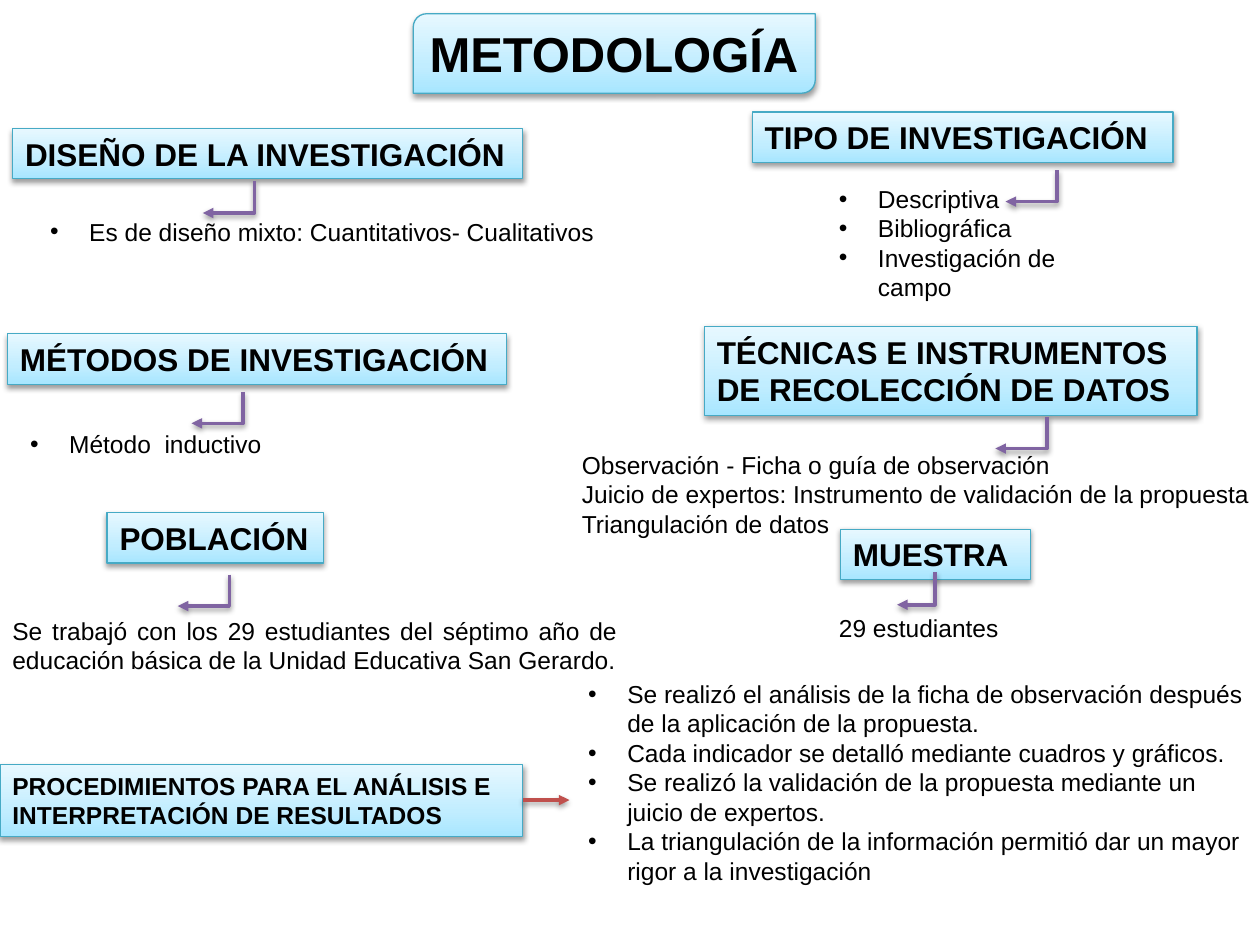
from copy import deepcopy

from lxml import etree
from pptx import Presentation
from pptx import util as u
from pptx.dml.color import RGBColor
from pptx.enum import shapes, text
from pptx.oxml.ns import qn

COLORS = {
    "text": "000000",
    "border": "46AAC5",
    "elbow": "8064A2",
    "straight": "C0504D",
    "shadow": "000000",
}
GRADIENT = [(0, "A7E6FF"), (0.35, "C1EDFF"), (1, "E7F8FF")]


def write_text(shape, lines, size=14, bold=False, bullet=False,
               align=text.PP_ALIGN.LEFT, space_after=0):
    frame = shape.text_frame
    frame.word_wrap = True
    frame.vertical_anchor = text.MSO_ANCHOR.TOP
    frame.text = "\n".join(lines)
    for paragraph in frame.paragraphs:
        paragraph.alignment = align
        paragraph.space_after = u.Pt(space_after)
        if bullet:
            properties = paragraph._p.get_or_add_pPr()
            properties.set("marL", str(u.Inches(0.31)))
            properties.set("indent", str(u.Inches(-0.31)))
            etree.SubElement(properties, qn("a:buFont"), typeface="Arial")
            etree.SubElement(properties, qn("a:buChar"), char="•")
        font = paragraph.font
        font.name = "Arial"
        font.size = u.Pt(size)
        font.bold = bold
        font.color.rgb = RGBColor.from_string(COLORS["text"])


def add_shadow(effects):
    shadow = etree.SubElement(effects, qn("a:outerShdw"), blurRad="40000",
                              dist="20000", dir="5400000", rotWithShape="0")
    color = etree.SubElement(shadow, qn("a:srgbClr"), val=COLORS["shadow"])
    etree.SubElement(color, qn("a:alpha"), val="38000")


presentation = Presentation()
presentation.slide_width = u.Inches(10)
presentation.slide_height = u.Inches(7.5)
slide = presentation.slides.add_slide(presentation.slide_layouts[6])

# Title and section headings: left, top, width, height, size, lines
headings = [
    (3.28, 0.11, 3.19, 0.63, 28, ["METODOLOGÍA"]),
    (0.1, 1.02, 4.05, 0.4, 18, ["DISEÑO DE LA INVESTIGACIÓN"]),
    (6.67, 4.2, 1.51, 0.4, 18, ["MUESTRA"]),
    (0.85, 4.07, 1.72, 0.4, 18, ["POBLACIÓN"]),
    (5.59, 2.59, 3.91, 0.71, 18,
     ["TÉCNICAS E INSTRUMENTOS", "DE RECOLECCIÓN DE DATOS"]),
    (0.06, 2.65, 3.96, 0.4, 18, ["MÉTODOS DE INVESTIGACIÓN"]),
    (5.97, 0.89, 3.34, 0.4, 18, ["TIPO DE INVESTIGACIÓN"]),
    (0, 6.07, 4.15, 0.57, 14,
     ["PROCEDIMIENTOS PARA EL ANÁLISIS E", "INTERPRETACIÓN DE RESULTADOS"]),
]
for index, (left, top, width, height, size, lines) in enumerate(headings):
    outline = (shapes.MSO_SHAPE.RECTANGLE if index
               else shapes.MSO_SHAPE.ROUND_2_DIAG_RECTANGLE)
    shape = slide.shapes.add_shape(outline, u.Inches(left), u.Inches(top),
                                   u.Inches(width), u.Inches(height))
    shape.fill.gradient()
    shape.fill.gradient_angle = 90
    first_stop = shape._element.spPr.find(".//" + qn("a:gs"))
    first_stop.addnext(deepcopy(first_stop))
    for stop, (position, color) in zip(shape.fill.gradient_stops, GRADIENT):
        stop.position = position
        stop.color.rgb = RGBColor.from_string(color)
    shape.line.color.rgb = RGBColor.from_string(COLORS["border"])
    shape.line.width = u.Pt(0.75)
    shape.shadow.inherit = False
    add_shadow(shape._element.spPr.find(qn("a:effectLst")))
    write_text(shape, lines, size=size, bold=True)

# Section details: left, top, width, height, lines, format
justified = {"align": text.PP_ALIGN.JUSTIFY}
bulleted = {"bullet": True}
details = [
    (0.3, 1.67, 4.6, 0.57,
     ["Es de diseño mixto: Cuantitativos- Cualitativos"], bulleted),
    (6.56, 1.41, 1.98, 1.04,
     ["Descriptiva", "Bibliográfica", "Investigación de campo"], bulleted),
    (0.14, 3.36, 2.08, 0.34, ["Método  inductivo"], bulleted),
    (4.52, 3.52, 6.57, 1.04,
     ["Observación - Ficha o guía de observación",
      "Juicio de expertos: Instrumento de validación de la propuesta",
      "Triangulación de datos"], {}),
    (6.56, 4.82, 1.76, 0.34, ["29 estudiantes"], justified),
    (4.57, 5.34, 5.48, 1.75,
     ["Se realizó el análisis de la ficha de observación después de la "
      "aplicación de la propuesta.",
      "Cada indicador se detalló mediante cuadros y gráficos.",
      "Se realizó la validación de la propuesta mediante un juicio de "
      "expertos.",
      "La triangulación de la información permitió dar un mayor rigor a la "
      "investigación"], bulleted),
    (0, 4.84, 5, 0.92,
     ["Se trabajó con los 29 estudiantes del séptimo año de educación básica "
      "de la Unidad Educativa San Gerardo."],
     {**justified, "space_after": 8}),
]
for left, top, width, height, lines, text_format in details:
    box = slide.shapes.add_textbox(u.Inches(left), u.Inches(top),
                                   u.Inches(width), u.Inches(height))
    write_text(box, lines, **text_format)

# Arrows: start x, start y, run to the left, drop
arrows = [
    (2.02, 1.44, 0.41, 0.25),
    (1.93, 3.11, 0.41, 0.25),
    (1.82, 4.56, 0.41, 0.25),
    (4.15, 6.35, -0.37, 0),
    (8.31, 3.31, 0.41, 0.25),
    (7.42, 4.54, 0.3, 0.26),
    (8.39, 1.35, 0.41, 0.25),
]
for start_x, start_y, run, drop in arrows:
    if drop:
        # A quarter turn makes the elbow go down first, then left
        left = start_x - (run + drop) / 2
        top = start_y + (drop - run) / 2
        connector = slide.shapes.add_connector(
            shapes.MSO_CONNECTOR.ELBOW, u.Inches(left), u.Inches(top),
            u.Inches(left + drop), u.Inches(top + run))
        properties = connector._element.spPr
        properties.find(qn("a:prstGeom")).set("prst", "bentConnector2")
        properties.find(qn("a:xfrm")).set("rot", "5400000")
        color = COLORS["elbow"]
    else:
        connector = slide.shapes.add_connector(
            shapes.MSO_CONNECTOR.STRAIGHT, u.Inches(start_x),
            u.Inches(start_y), u.Inches(start_x - run), u.Inches(start_y))
        properties = connector._element.spPr
        color = COLORS["straight"]
    connector.line.color.rgb = RGBColor.from_string(color)
    connector.line.width = u.Pt(2)
    etree.SubElement(properties.find(qn("a:ln")), qn("a:tailEnd"),
                     type="triangle")
    add_shadow(etree.SubElement(properties, qn("a:effectLst")))

presentation.save("out.pptx")
